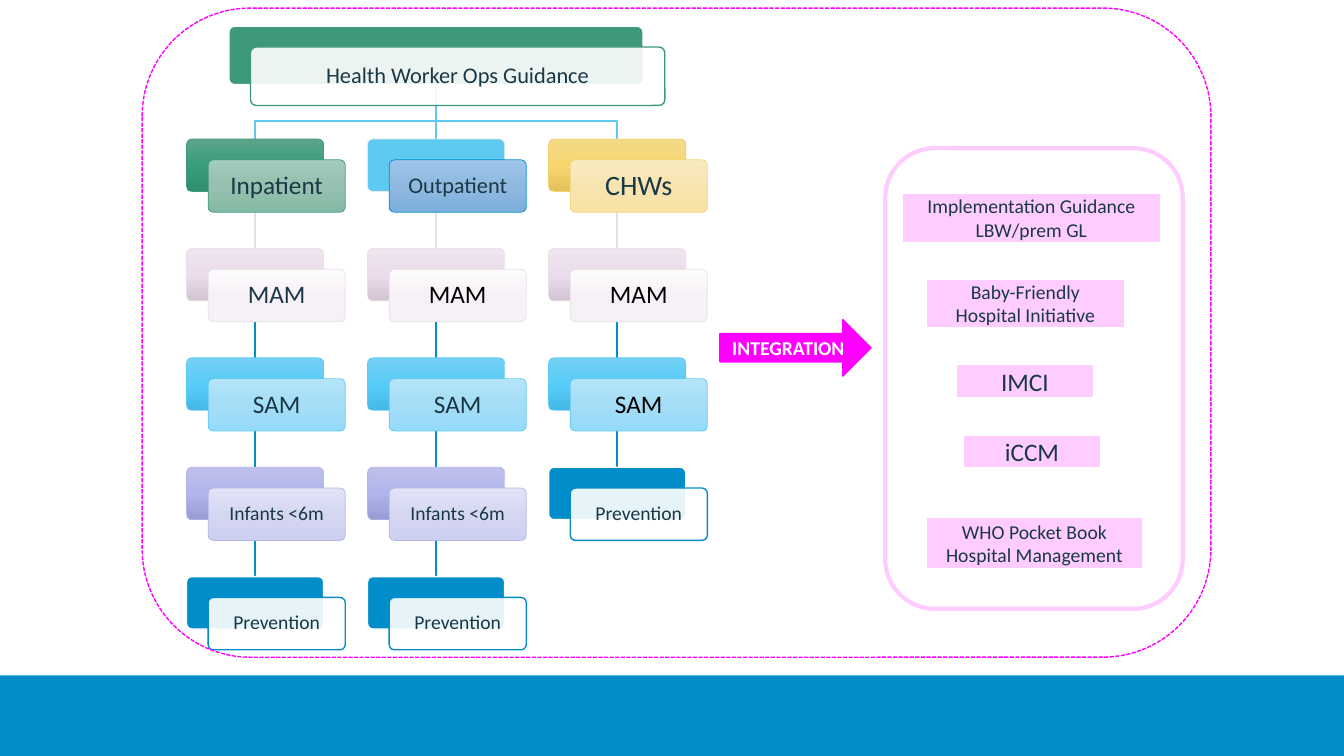
from copy import deepcopy

from pptx import Presentation
from pptx import util as u
from pptx.dml.color import RGBColor
from pptx.enum import dml, shapes, text
from pptx.oxml import ns, xmlchemy

WIDTH, HEIGHT = u.Inches(13.33), u.Inches(7.5)
FONT = "Calibri"

# Colours
WHITE = RGBColor(0xFF, 0xFF, 0xFF)
BLACK = RGBColor(0x00, 0x00, 0x00)
INK = RGBColor(0x1A, 0x38, 0x45)
BLUE = RGBColor(0x00, 0x8D, 0xC9)
SKY = RGBColor(0x5E, 0xC9, 0xF1)
GREEN = RGBColor(0x3E, 0x98, 0x7B)
YELLOW = RGBColor(0xF1, 0xD3, 0x76)
MAUVE = RGBColor(0xEA, 0xDE, 0xEA)
LILAC = RGBColor(0xB3, 0xB6, 0xE7)
GREY = RGBColor(0xE7, 0xE7, 0xE7)
PINK = RGBColor(0xFF, 0xCC, 0xFF)
MAGENTA = RGBColor(0xFF, 0x00, 0xFF)


def shades(*codes):
    return tuple(RGBColor.from_string(code) for code in codes)


GREEN_BACK = shades("5CA58A", "399C7D", "2F8F70")
GREEN_FRONT = shades("A3CBBB", "97C0B0", "84BAA4")
BLUE_FRONT = shades("9DC4E9", "90B9E0", "7CAFDC")
YELLOW_BACK = shades("F4D988", "F7D670", "E3C25C")
YELLOW_FRONT = shades("F9EAC0", "F7E4B1", "F9E2A4")
MAUVE_BACK = shades("EFE5EF", "EBDDEB", "D2C4D2")
MAUVE_FRONT = shades("FDFCFD", "F6F1F6", "F5EFF5")
SKY_BACK = shades("74D0F4", "57CCF8", "45B9E5")
SKY_FRONT = shades("B5E4F9", "A5DDF7", "95DBFA")
LILAC_BACK = shades("BEC0EB", "B0B4EA", "999CD3")
LILAC_FRONT = shades("E2E3F6", "D5D6F2", "CED0F1")

# Card styles: back fill, back line, front fill, front line, line width
STYLES = {
    "root": (GREEN, WHITE, WHITE, GREEN, 1),
    "inpatient": (GREEN_BACK, GREEN, GREEN_FRONT, GREEN, 0.5),
    "outpatient": (SKY, GREY, BLUE_FRONT, BLUE, 0.5),
    "chws": (YELLOW_BACK, YELLOW, YELLOW_FRONT, YELLOW, 0.5),
    "mam": (MAUVE_BACK, MAUVE, MAUVE_FRONT, MAUVE, 0.5),
    "sam": (SKY_BACK, SKY, SKY_FRONT, SKY, 0.5),
    "infants": (LILAC_BACK, LILAC, LILAC_FRONT, LILAC, 0.5),
    "prevention": (BLUE, WHITE, WHITE, BLUE, 1),
}

# Tree grid, in percent of the slide's width and height
COLUMN_LEFT, COLUMN_STEP, CARD_WIDTH = 13.88, 13.47, 10.2
ROW_TOP, ROW_STEP, CARD_HEIGHT = 18.4, 14.47, 6.93
SHIFT_X, SHIFT_Y = 1.61, 2.75
ROOT = (17.03, 3.47, 30.83, 7.73)
ROOT_BEND = 16

INFANTS = ("Infants <6m", "infants", 14, INK)
PREVENTION = ("Prevention", "prevention", 14, INK)
COLUMNS = [
    [("Inpatient", "inpatient", 18, INK), ("MAM", "mam", 18, INK),
     ("SAM", "sam", 18, INK), INFANTS, PREVENTION],
    [("Outpatient", "outpatient", 16, INK), ("MAM", "mam", 18, BLACK),
     ("SAM", "sam", 18, INK), INFANTS, PREVENTION],
    [("CHWs", "chws", 20, INK), ("MAM", "mam", 18, BLACK),
     ("SAM", "sam", 18, BLACK), PREVENTION],
]

# Guidance labels: text, size, box in percent
LABELS = [
    ("Implementation Guidance\nLBW/prem GL", 14, (67.22, 25.73, 19.05, 6.13)),
    ("Baby-Friendly\nHospital Initiative", 14, (69.02, 37.07, 14.55, 6.13)),
    ("IMCI", 18, (71.27, 48.4, 9.98, 4)),
    ("iCCM", 18, (71.79, 57.73, 9.98, 4)),
    ("WHO Pocket Book\nHospital Management", 14, (69.02, 68.67, 15.9, 6.4)),
]


def across(percent):
    return u.Emu(round(WIDTH * percent / 100))


def down(percent):
    return u.Emu(round(HEIGHT * percent / 100))


def paint(shape, fill):
    """Fill with nothing, one colour, or a downward gradient of three."""
    if fill is None:
        shape.fill.background()
    elif isinstance(fill, RGBColor):
        shape.fill.solid()
        shape.fill.fore_color.rgb = fill
    else:
        shape.fill.gradient()
        shape.fill.gradient_angle = 270
        stop_list = shape._element.xpath(".//a:gsLst")[0]
        stop_list.insert(1, deepcopy(stop_list[0]))
        for stop, colour, position in zip(shape.fill.gradient_stops, fill, (0, 0.5, 1)):
            stop.color.rgb = colour
            stop.position = position


def add_box(slide, kind, box, fill, line, width=1):
    left, top, box_width, box_height = box
    shape = slide.shapes.add_shape(
        kind, across(left), down(top), across(box_width), down(box_height))
    shape.shadow.inherit = False
    paint(shape, fill)
    shape.line.color.rgb = line
    shape.line.width = u.Pt(width)
    return shape


def write(shape, words, size, colour, bold=False, spacing=1.0):
    frame = shape.text_frame
    frame.word_wrap = True
    frame.vertical_anchor = text.MSO_ANCHOR.MIDDLE
    frame.text = words
    for paragraph in frame.paragraphs:
        paragraph.alignment = text.PP_ALIGN.CENTER
        paragraph.line_spacing = spacing
        for run in paragraph.runs:
            run.font.name, run.font.size, run.font.bold = FONT, u.Pt(size), bold
            run.font.color.rgb = colour


def add_card(slide, box, words, style, size, colour):
    """A back plate with a shifted front plate that holds the text."""
    back_fill, back_line, front_fill, front_line, width = STYLES[style]
    left, top, box_width, box_height = box
    front_box = (left + SHIFT_X, top + SHIFT_Y, box_width, box_height)
    rounded = shapes.MSO_SHAPE.ROUNDED_RECTANGLE
    back = add_box(slide, rounded, box, back_fill, back_line, width)
    front = add_box(slide, rounded, front_box, front_fill, front_line, width)
    back.adjustments[0] = front.adjustments[0] = 0.1
    if front_fill == WHITE:
        solid = front._element.xpath("./p:spPr/a:solidFill/a:srgbClr")[0]
        alpha = xmlchemy.OxmlElement("a:alpha")
        alpha.set("val", "90000")
        solid.append(alpha)
    frame = front.text_frame
    frame.margin_left = frame.margin_right = u.Inches(0.08)
    frame.margin_top = frame.margin_bottom = u.Inches(0.08)
    write(front, words, size, colour, spacing=0.9)


def add_link(slide, points, colour):
    """A straight or bent line through points given in percent."""
    corners = [(across(x), down(y)) for x, y in points]
    if len(corners) == 2:
        link = slide.shapes.add_connector(
            shapes.MSO_CONNECTOR.STRAIGHT, *corners[0], *corners[1])
        link._element.spPr.append(link._element.makeelement(ns.qn("a:effectLst"), {}))
    else:
        builder = slide.shapes.build_freeform(*corners[0])
        builder.add_line_segments(corners[1:], close=False)
        link = builder.convert_to_shape()
        link.shadow.inherit = False
        link.fill.background()
    link.line.color.rgb = colour
    link.line.width = u.Pt(1)


def add_tree(slide):
    root_x = COLUMN_LEFT + COLUMN_STEP + CARD_WIDTH / 2
    root_bottom = ROOT[1] + ROOT[3]
    cards = []
    # Links first, so that they lie behind the cards
    for column, entries in enumerate(COLUMNS):
        left = COLUMN_LEFT + column * COLUMN_STEP
        middle = left + CARD_WIDTH / 2
        for row, entry in enumerate(entries):
            top = ROW_TOP + row * ROW_STEP
            cards.append(((left, top, CARD_WIDTH, CARD_HEIGHT), entry))
            if row:
                colour = MAUVE if row == 1 else BLUE
                bottom_above = top - ROW_STEP + CARD_HEIGHT
                add_link(slide, [(middle, bottom_above), (middle, top)], colour)
            elif column == 1:
                add_link(slide, [(root_x, root_bottom), (root_x, top)], SKY)
            else:
                add_link(slide, [(root_x, root_bottom), (root_x, ROOT_BEND),
                                 (middle, ROOT_BEND), (middle, top)], SKY)
    add_card(slide, ROOT, "Health Worker Ops Guidance", "root", 16, INK)
    for box, entry in cards:
        add_card(slide, box, *entry)


def main():
    presentation = Presentation()
    presentation.slide_width, presentation.slide_height = WIDTH, HEIGHT
    slide = presentation.slides.add_slide(presentation.slide_layouts[6])
    kinds = shapes.MSO_SHAPE

    # Bottom band
    band = add_box(slide, kinds.RECTANGLE, (0, 89.33, 100, 10.67), BLUE, BLUE)
    band.line.fill.background()

    add_tree(slide)

    # Guidance panel
    for words, size, box in LABELS:
        write(add_box(slide, kinds.RECTANGLE, box, PINK, PINK), words, size, INK)
    add_box(slide, kinds.ROUNDED_RECTANGLE, (65.87, 19.6, 22.13, 60.93), None, PINK, 3)

    # Dashed frame and integration arrow
    frame = add_box(slide, kinds.ROUNDED_RECTANGLE, (10.58, 1.07, 79.52, 85.87), None, MAGENTA)
    frame.line.dash_style = dml.MSO_LINE.SQUARE_DOT
    arrow = add_box(slide, kinds.RIGHT_ARROW, (53.56, 42.27, 11.25, 7.47), MAGENTA, MAGENTA)
    write(arrow, "INTEGRATION", 14, WHITE, bold=True)

    presentation.save("out.pptx")


if __name__ == "__main__":
    main()
